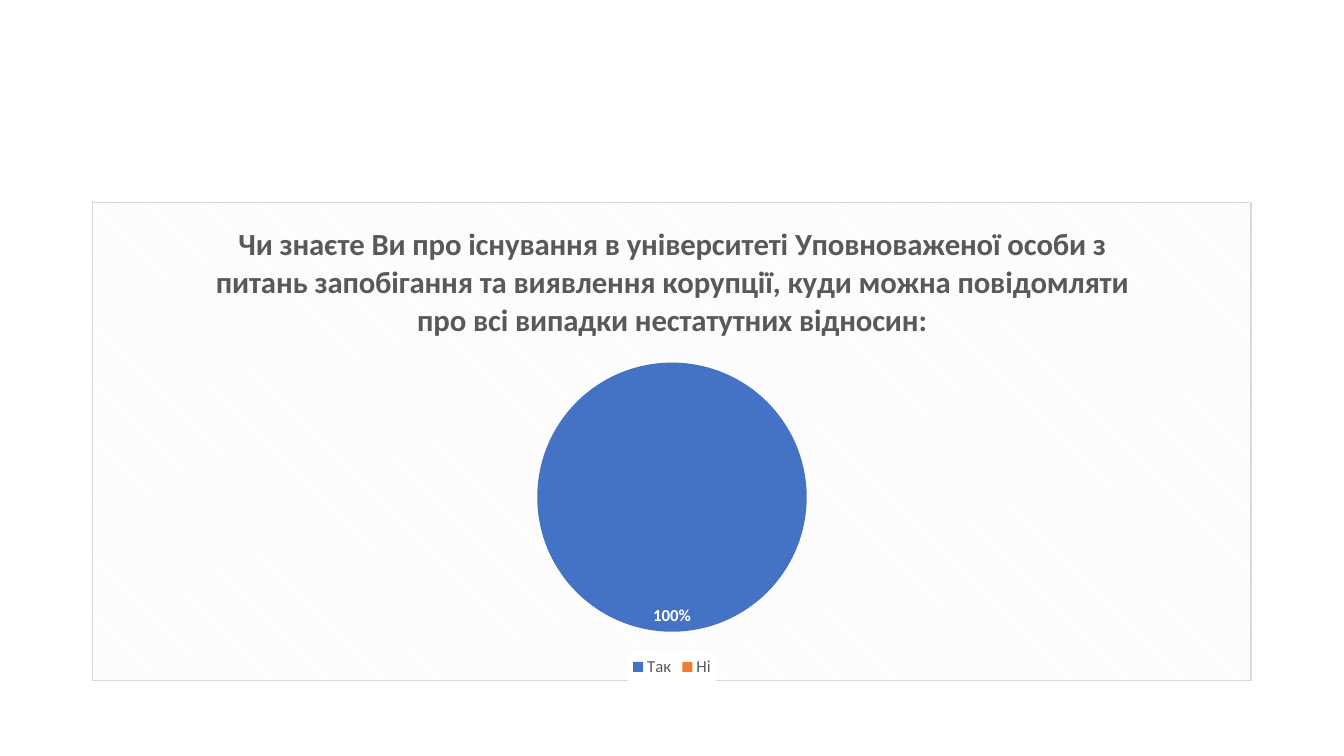
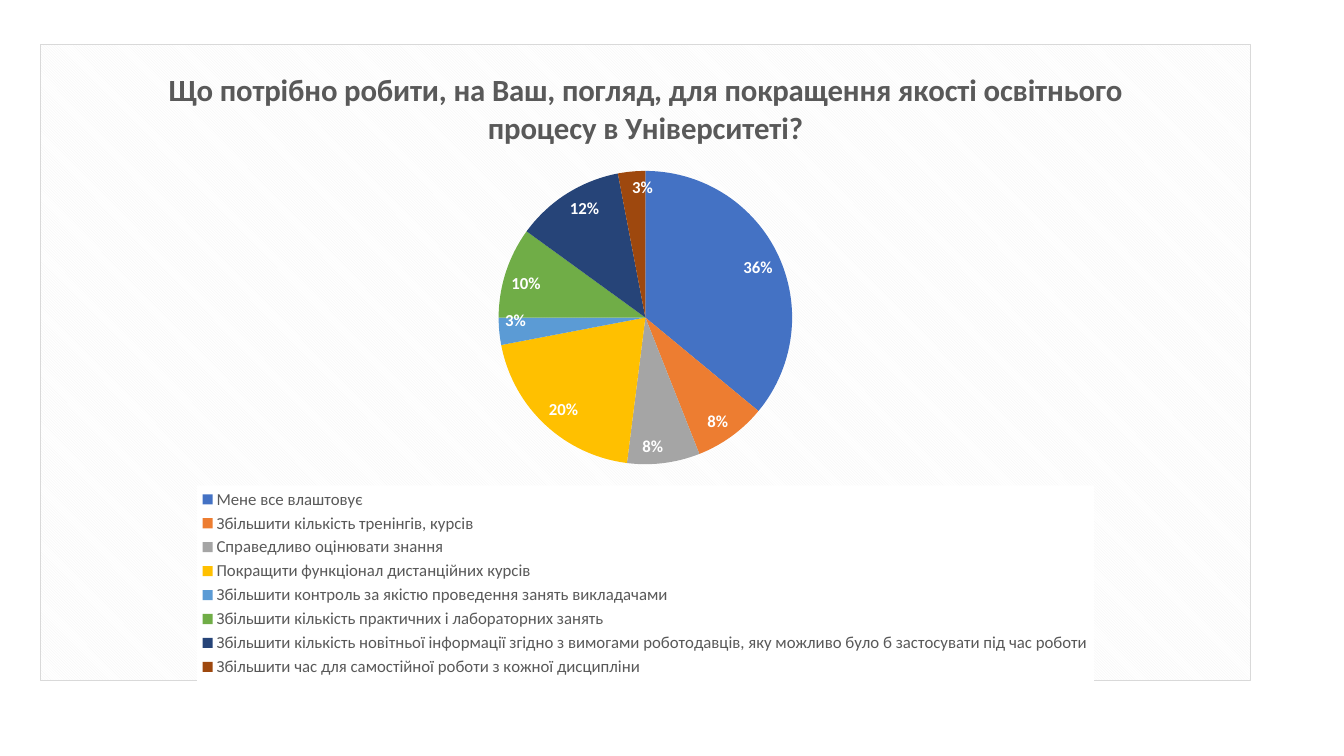
import pptx
import pptx.chart.data
import pptx.dml.color
import pptx.enum.chart
import pptx.oxml
import pptx.oxml.ns
import pptx.util

Cm = pptx.util.Cm
Pt = pptx.util.Pt
RGBColor = pptx.dml.color.RGBColor
qn = pptx.oxml.ns.qn

# Shared colours
WHITE = RGBColor(0xFF, 0xFF, 0xFF)
TEXT_GREY = RGBColor(0x59, 0x59, 0x59)
HATCH_GREY = RGBColor(0xF2, 0xF2, 0xF2)
BORDER_GREY = RGBColor(0xD9, 0xD9, 0xD9)
SLICE_COLOURS = [
    RGBColor(0x44, 0x72, 0xC4),
    RGBColor(0xED, 0x7D, 0x31),
    RGBColor(0xA5, 0xA5, 0xA5),
    RGBColor(0xFF, 0xC0, 0x00),
    RGBColor(0x5B, 0x9B, 0xD5),
    RGBColor(0x70, 0xAD, 0x47),
    RGBColor(0x26, 0x44, 0x78),
    RGBColor(0x9E, 0x48, 0x0E),
]

# Shared text formats
FONT_NAME = "Calibri"
TITLE_FORMAT = {"name": FONT_NAME, "size": Pt(22), "bold": True}
LEGEND_FORMAT = {"name": FONT_NAME, "size": Pt(12), "bold": False}
LABEL_FORMAT = {"name": FONT_NAME, "size": Pt(12), "bold": True}

HATCHED_AREA = f"""
<c:spPr {pptx.oxml.ns.nsdecls("c", "a")}>
  <a:pattFill prst="dkDnDiag">
    <a:fgClr><a:srgbClr val="{HATCH_GREY}"/></a:fgClr>
    <a:bgClr><a:srgbClr val="{WHITE}"/></a:bgClr>
  </a:pattFill>
  <a:ln w="{Pt(0.75)}"><a:solidFill><a:srgbClr val="{BORDER_GREY}"/></a:solidFill></a:ln>
</c:spPr>"""
WHITE_AREA = f"""
<c:spPr {pptx.oxml.ns.nsdecls("c", "a")}>
  <a:solidFill><a:srgbClr val="{WHITE}"/></a:solidFill>
  <a:ln><a:noFill/></a:ln>
</c:spPr>"""
SQUARE_CORNERS = f'<c:roundedCorners {pptx.oxml.ns.nsdecls("c")} val="0"/>'

# Survey questions: chart box (left, top, width, height in cm) and answers in percent
SURVEY = [
    {
        "question": "Чи знаєте Ви про існування в університеті Уповноваженої особи з "
                    "питань запобігання та виявлення корупції, куди можна повідомляти "
                    "про всі випадки нестатутних відносин:",
        "box": (2.33, 5.08, 29.21, 12.09),
        "answers": {"Так": 100, "Ні": None},
    },
    {
        "question": "Що потрібно робити, на Ваш, погляд, для покращення якості "
                    "освітнього процесу в Університеті?",
        "box": (1, 1.12, 30.53, 16.05),
        "answers": {
            "Мене все влаштовує": 36,
            "Збільшити кількість тренінгів, курсів": 8,
            "Справедливо оцінювати знання": 8,
            "Покращити функціонал дистанційних курсів": 20,
            "Збільшити контроль за якістю проведення занять викладачами": 3,
            "Збільшити кількість практичних і лабораторних занять": 10,
            "Збільшити кількість новітньої інформації згідно з вимогами роботодавців, "
            "яку можливо було б застосувати під час роботи": 12,
            "Збільшити час для самостійної роботи з кожної дисципліни": 3,
        },
    },
]


def format_font(font, values, colour):
    for name, value in values.items():
        setattr(font, name, value)
    font.color.rgb = colour


def fill_area(element, area_xml):
    """Give a chart part its fill and line, which come before its text properties."""
    element.find(qn("c:txPr")).addprevious(pptx.oxml.parse_xml(area_xml))


def style_title(chart, question):
    chart.has_title = True
    chart.chart_title.include_in_layout = False
    paragraph = chart.chart_title.text_frame.paragraphs[0]
    run = paragraph.add_run()
    run.text = question
    format_font(run.font, TITLE_FORMAT, TEXT_GREY)


def style_legend(chart):
    chart.has_legend = True
    chart.legend.position = pptx.enum.chart.XL_LEGEND_POSITION.BOTTOM
    chart.legend.include_in_layout = False
    format_font(chart.legend.font, LEGEND_FORMAT, TEXT_GREY)
    fill_area(chart.element.find(".//" + qn("c:legend")), WHITE_AREA)


def style_slices(plot, slice_count):
    plot.vary_by_categories = True
    for index, colour in enumerate(SLICE_COLOURS[:slice_count]):
        slice_format = plot.series[0].points[index].format
        slice_format.fill.solid()
        slice_format.fill.fore_color.rgb = colour
        slice_format.line.fill.background()

    plot.has_data_labels = True
    labels = plot.data_labels
    label_settings = {
        "show_percentage": True,
        "show_value": False,
        "number_format": "0%",
        "number_format_is_linked": False,
        "position": pptx.enum.chart.XL_LABEL_POSITION.INSIDE_END,
    }
    for name, value in label_settings.items():
        setattr(labels, name, value)
    format_font(labels.font, LABEL_FORMAT, WHITE)


def add_question_slide(presentation, question, box, answers):
    """Add a slide with one pie chart in the given box."""
    slide = presentation.slides.add_slide(presentation.slide_layouts.get_by_name("Blank"))
    data = pptx.chart.data.CategoryChartData()
    data.categories = list(answers)
    data.add_series(question, list(answers.values()))
    chart = slide.shapes.add_chart(
        pptx.enum.chart.XL_CHART_TYPE.PIE, *map(Cm, box), data
    ).chart

    # Chart frame
    chart.font.name = FONT_NAME
    chart.font.size = Pt(10)
    fill_area(chart.element, HATCHED_AREA)
    chart.element.find(qn("c:chart")).addprevious(pptx.oxml.parse_xml(SQUARE_CORNERS))

    # Chart parts
    style_title(chart, question)
    style_legend(chart)
    style_slices(chart.plots[0], len(answers))


def main():
    presentation = pptx.Presentation()
    presentation.slide_width = Cm(33.87)
    presentation.slide_height = Cm(19.05)
    for survey_question in SURVEY:
        add_question_slide(presentation, **survey_question)
    presentation.save("out.pptx")


if __name__ == "__main__":
    main()
